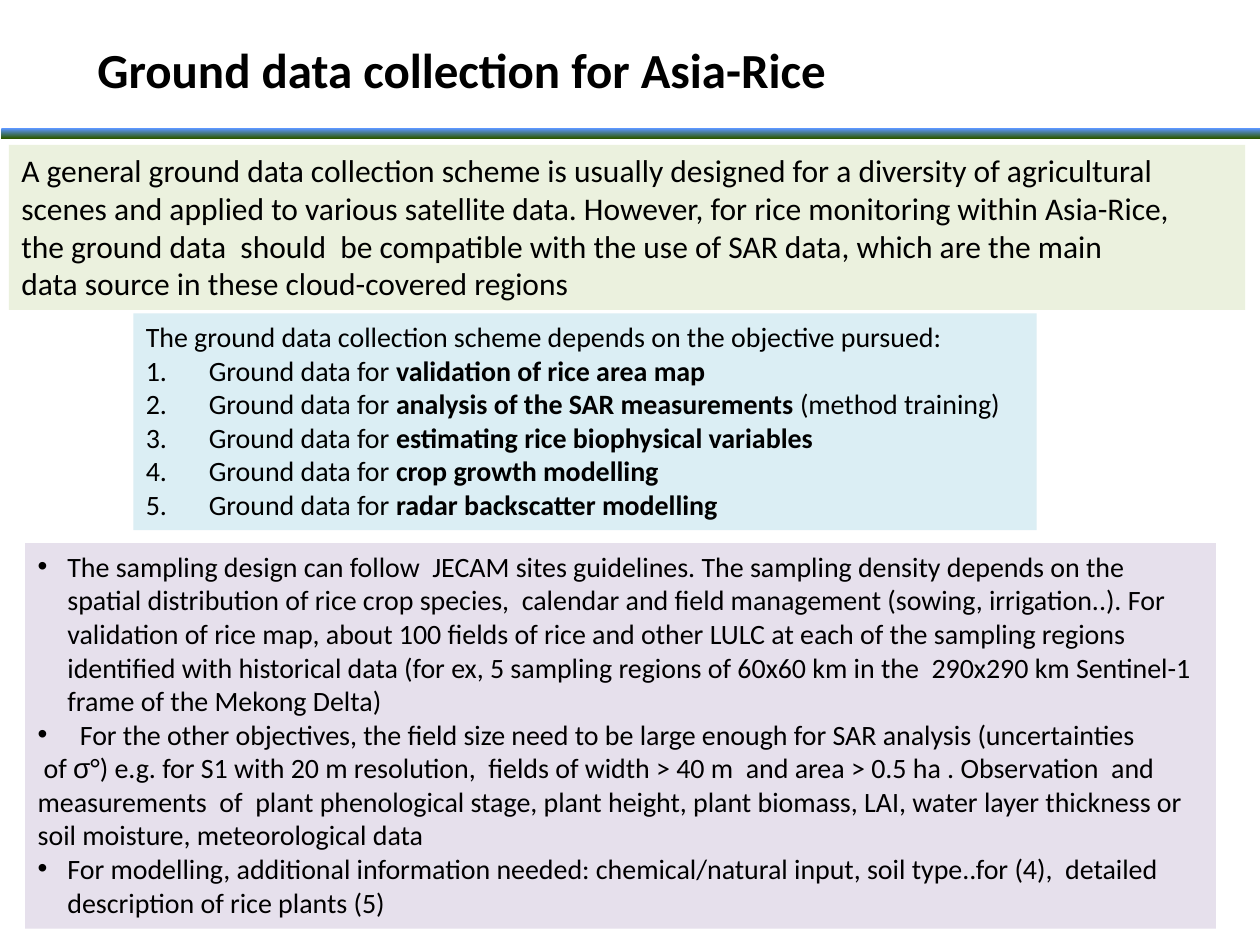
"""Build the slide on ground data collection for Asia-Rice."""
import pptx
import pptx.dml.color
import pptx.enum.shapes
import pptx.enum.text
import pptx.oxml.ns
import pptx.util
from lxml import etree

Cm = pptx.util.Cm
RGBColor = pptx.dml.color.RGBColor

BLACK = RGBColor(0x00, 0x00, 0x00)
PALE_GREEN = RGBColor(0xEB, 0xF1, 0xDE)
PALE_BLUE = RGBColor(0xDB, 0xEE, 0xF4)
PALE_PURPLE = RGBColor(0xE6, 0xE0, 0xEC)
RULE_BLUE = RGBColor(0x5C, 0x96, 0xFE)
RULE_GREEN = RGBColor(0x2C, 0x58, 0x00)


def write(paragraph, text, size=16, bold=False, font="Calibri"):
    run = paragraph.add_run()
    run.text = text
    run.font.size = pptx.util.Pt(size)
    run.font.bold = bold
    run.font.name = font
    run.font.color.rgb = BLACK


def indent(paragraph, margin, first_line, bullet=None, **attributes):
    properties = paragraph._p.get_or_add_pPr()
    properties.set("marL", str(Cm(margin)))
    properties.set("indent", str(Cm(first_line)))
    if bullet:
        if bullet == "a:buChar":
            etree.SubElement(properties, pptx.oxml.ns.qn("a:buFont"), typeface="Arial")
        etree.SubElement(properties, pptx.oxml.ns.qn(bullet), **attributes)


presentation = pptx.Presentation()
presentation.slide_width = Cm(25.4)
presentation.slide_height = Cm(19.05)
slide = presentation.slides.add_slide(presentation.slide_layouts[6])

frames = []
for left, top, width, height, color in (
    (0.3, 0.53, 18.01, 1.7, None),
    (2.69, 6.32, 18.21, 4.37, PALE_BLUE),
    (0.51, 10.95, 24.0, 7.77, PALE_PURPLE),
    (0.18, 2.92, 24.92, 3.33, PALE_GREEN),
):
    panel = slide.shapes.add_textbox(Cm(left), Cm(top), Cm(width), Cm(height))
    if color:
        panel.fill.solid()
        panel.fill.fore_color.rgb = color
    panel.text_frame.word_wrap = True
    frames.append(panel.text_frame)
title, objectives, sampling, scheme = frames

title.vertical_anchor = pptx.enum.text.MSO_ANCHOR.MIDDLE
title.paragraphs[0].alignment = pptx.enum.text.PP_ALIGN.CENTER
write(title.paragraphs[0], "Ground data collection for Asia-Rice", size=28, bold=True)

rule = slide.shapes.add_shape(
    pptx.enum.shapes.MSO_SHAPE.RECTANGLE, Cm(0.03), Cm(2.59), Cm(25.4), Cm(0.2))
rule.shadow.inherit = False
rule.line.fill.background()
rule.fill.gradient()
rule.fill.gradient_angle = 270
for stop, color in zip(rule.fill.gradient_stops, (RULE_BLUE, RULE_GREEN)):
    stop.color.rgb = color

scheme_lines = (
    "A general ground data collection scheme is usually designed for a diversity of agricultural",
    "scenes and applied to various satellite data. However, for rice monitoring within Asia-Rice,",
    "the ground data  should  be compatible with the use of SAR data, which are the main",
    "data source in these cloud-covered regions",
)
for number, line in enumerate(scheme_lines):
    paragraph = scheme.add_paragraph() if number else scheme.paragraphs[0]
    write(paragraph, line, size=18)

heading = objectives.paragraphs[0]
indent(heading, 1.27, -1.27)
write(heading, "The ground data collection scheme depends on the objective pursued:")
for objective, remark in (
    ("validation of rice area map", ""),
    ("analysis of the SAR measurements ", "(method training)"),
    ("estimating rice biophysical variables", ""),
    ("crop growth modelling", ""),
    ("radar backscatter modelling", ""),
):
    paragraph = objectives.add_paragraph()
    indent(paragraph, 1.27, -1.27, "a:buAutoNum", type="arabicPeriod")
    write(paragraph, "Ground data for ")
    write(paragraph, objective, bold=True)
    if remark:
        write(paragraph, remark)

design = sampling.paragraphs[0]
field_size, measurements, modelling = (sampling.add_paragraph() for _ in range(3))
for paragraph, margin in ((design, 0.6), (field_size, 0.85), (modelling, 0.6)):
    indent(paragraph, margin, -margin, "a:buChar", char="•")
indent(measurements, 0, 0.12)

write(design, "The sampling design can follow  JECAM sites guidelines. The sampling density "
      "depends on the spatial distribution of rice crop species,  calendar and field management "
      "(sowing, irrigation..). For validation of rice map, about 100 fields of rice and other "
      "LULC at each of the sampling regions  identified with historical data (for ex, 5 sampling "
      "regions of 60x60 km in the  290x290 km Sentinel-1 frame of the Mekong Delta)")
write(field_size, "For the other objectives, the field size need to be large enough for SAR "
      "analysis (uncertainties")
write(measurements, "of ")
write(measurements, "σ", font="Arial")
write(measurements, "°) e.g. for S1 with 20 m resolution,  fields of width > 40 m  and "
      "area > 0.5 ha . Observation  and measurements  of  plant phenological stage, plant height, "
      "plant biomass, LAI, water layer thickness or soil moisture, meteorological data")
write(modelling, "For modelling, additional information needed: chemical/natural input, "
      "soil type..for (4),  detailed description of rice plants (5)")

presentation.save("out.pptx")
